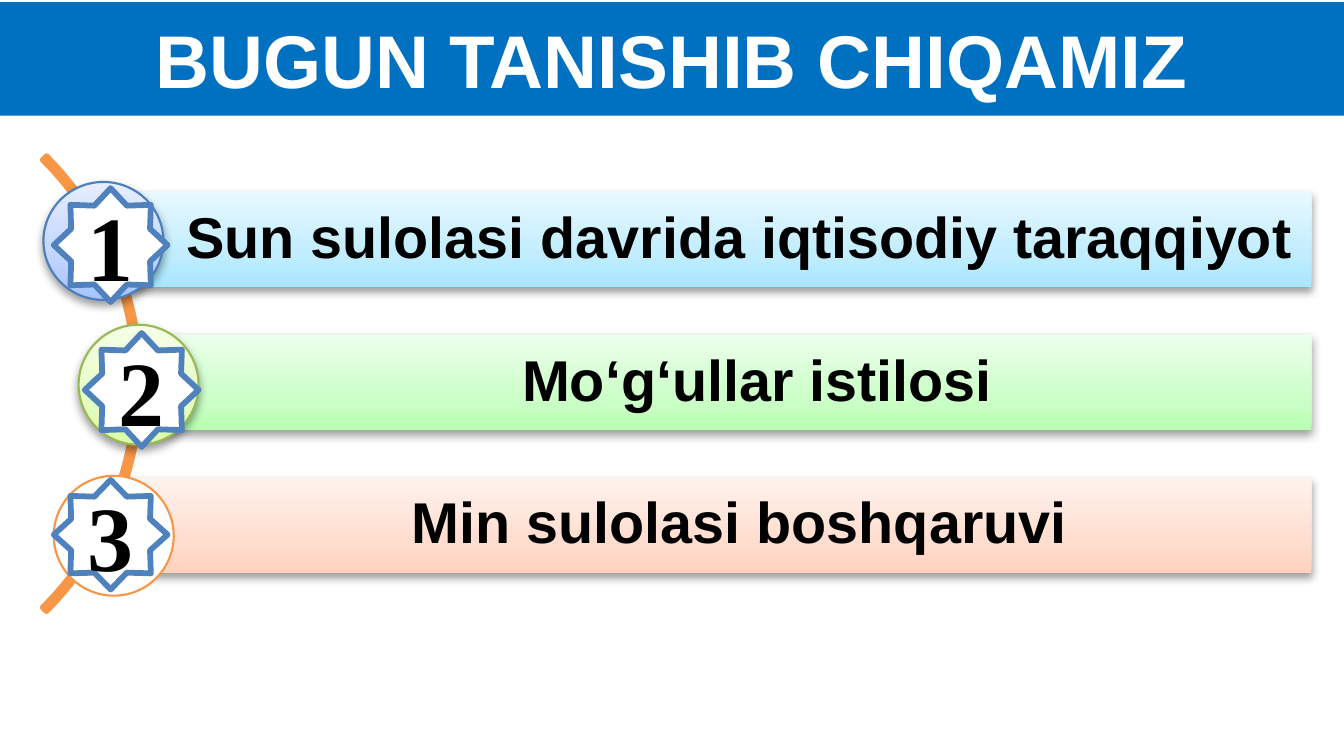
from pptx import Presentation
from pptx.dml.color import RGBColor
from pptx.enum.shapes import MSO_SHAPE
from pptx.enum.text import MSO_ANCHOR, MSO_AUTO_SIZE, PP_ALIGN
from pptx.oxml import parse_xml
from pptx.oxml.ns import nsdecls, qn
from pptx.util import Emu, Inches, Pt

ARC, BAR = MSO_SHAPE.BLOCK_ARC, MSO_SHAPE.RECTANGLE
DISC, STAR = MSO_SHAPE.OVAL, MSO_SHAPE.STAR_8_POINT
MIDDLE, CENTER, NO_FIT = MSO_ANCHOR.MIDDLE, PP_ALIGN.CENTER, MSO_AUTO_SIZE.NONE

COLORS = {
    "title": "0070C0", "white": "FFFFFF", "black": "000000",
    "orange": "F79646", "star": "4F81BD", "blue": "4B7EBC", "green": "98B955",
}
# Gradient stops from bottom to top
BLUE_BAR = ["A7E6FF", "C1EDFF", "E7F8FF"]
BLUE_DISC = ["A4C4FF", "BFD4FF", "E6EEFF"]
GREEN_BAR = ["B9FFB2", "CDFFC9", "ECFFEA"]
GREEN_DISC = ["DAFDA7", "E4FCC2", "F5FFE7"]
PEACH_BAR = ["FFD2BD", "FFDED0", "FFF2ED"]


def write(shape, text, size=20, font="Arial", color="black", pads=(0.1, 0.05), left=None, space=1.0):
    frame = shape.text_frame
    frame.word_wrap, frame.auto_size = True, NO_FIT
    frame.vertical_anchor = MIDDLE
    frame.margin_left = Inches(pads[0] if left is None else left)
    frame.margin_right = Inches(pads[0])
    frame.margin_top = frame.margin_bottom = Inches(pads[1])
    para = frame.paragraphs[0]
    para.alignment, para.line_spacing = CENTER, space
    run = para.add_run()
    run.text = text
    run.font.size, run.font.name, run.font.bold = Pt(size), font, True
    run.font.color.rgb = RGBColor.from_string(COLORS[color])


def draw(kind, box, fill=None, line=None, width=0.75):
    """Add a shape; a list of colors as fill gives a gradient and a shadow."""
    shape = slide.shapes.add_shape(kind, *map(Inches, box))
    shape.shadow.inherit = False
    if line:
        shape.line.color.rgb = RGBColor.from_string(COLORS[line])
        shape.line.width = Pt(width)
    else:
        shape.line.fill.background()
    if isinstance(fill, list):
        props = shape.element.spPr
        stops = "".join(
            f'<a:gs pos="{pos}"><a:srgbClr val="{tint}"/></a:gs>'
            for pos, tint in zip((0, 35000, 100000), fill))
        props.find(qn("a:prstGeom")).addnext(parse_xml(
            f'<a:gradFill {nsdecls("a")} rotWithShape="1"><a:gsLst>{stops}</a:gsLst>'
            '<a:lin ang="16200000" scaled="0"/></a:gradFill>'))
        props.find(qn("a:effectLst")).append(parse_xml(
            f'<a:outerShdw {nsdecls("a")} blurRad="{Pt(3.1)}" dist="{Pt(1.6)}" dir="5400000" '
            f'rotWithShape="0"><a:srgbClr val="{COLORS["black"]}">'
            '<a:alpha val="38000"/></a:srgbClr></a:outerShdw>'))
    elif fill:
        shape.fill.solid()
        shape.fill.fore_color.rgb = RGBColor.from_string(COLORS[fill])
    else:
        shape.fill.background()
    return shape


# Slide of 16.5 by 9 cm
deck = Presentation()
deck.slide_width, deck.slide_height = Emu(5940425), Emu(3240088)
slide = deck.slides.add_slide(deck.slide_layouts[5])

# Title band
title = slide.shapes.title
title.left, title.top, title.height = map(Inches, (0, 0.01, 0.55))
title.width = deck.slide_width
title.fill.solid()
title.fill.fore_color.rgb = RGBColor.from_string(COLORS["title"])
write(title, "BUGUN TANISHIB CHIQAMIZ", size=26, color="white")

# Arc behind the list
arc = draw(ARC, (-2.43, 0.3, 3.11, 3.11), line="orange", width=2)
for spot, value in enumerate((189, 27, 0.008)):
    arc.adjustments[spot] = value

# Topics: text, bar left, bar fill, disc box, disc fill, disc line, star box
topics = [
    ("Sun sulolasi davrida iqtisodiy taraqqiyot", 0.5, BLUE_BAR,
     (0.21, 0.88, 0.58, 0.57), BLUE_DISC, "blue", (0.26, 0.91, 0.55, 0.55)),
    ("Mo‘g‘ullar istilosi", 0.67, GREEN_BAR,
     (0.38, 1.57, 0.58, 0.58), GREEN_DISC, "green", (0.41, 1.61, 0.55, 0.55)),
    ("Min sulolasi boshqaruvi", 0.5, PEACH_BAR,
     (0.26, 2.3, 0.58, 0.58), "white", "orange", (0.26, 2.32, 0.55, 0.53)),
]
right, first, step = 6.34, 0.93, 0.69
for index, (text, left, tints, disc, fill, line, star) in enumerate(topics):
    bar = draw(BAR, (left, first + index * step, right - left, 0.46), tints)
    write(bar, text, pads=(0.06, 0.06), left=0.37, space=0.9)
    draw(DISC, disc, fill, line)
    badge = draw(STAR, star, "white", "star", 2)
    write(badge, str(index + 1), size=32, font="Times New Roman", pads=(0.06, 0.03))

deck.save("out.pptx")
